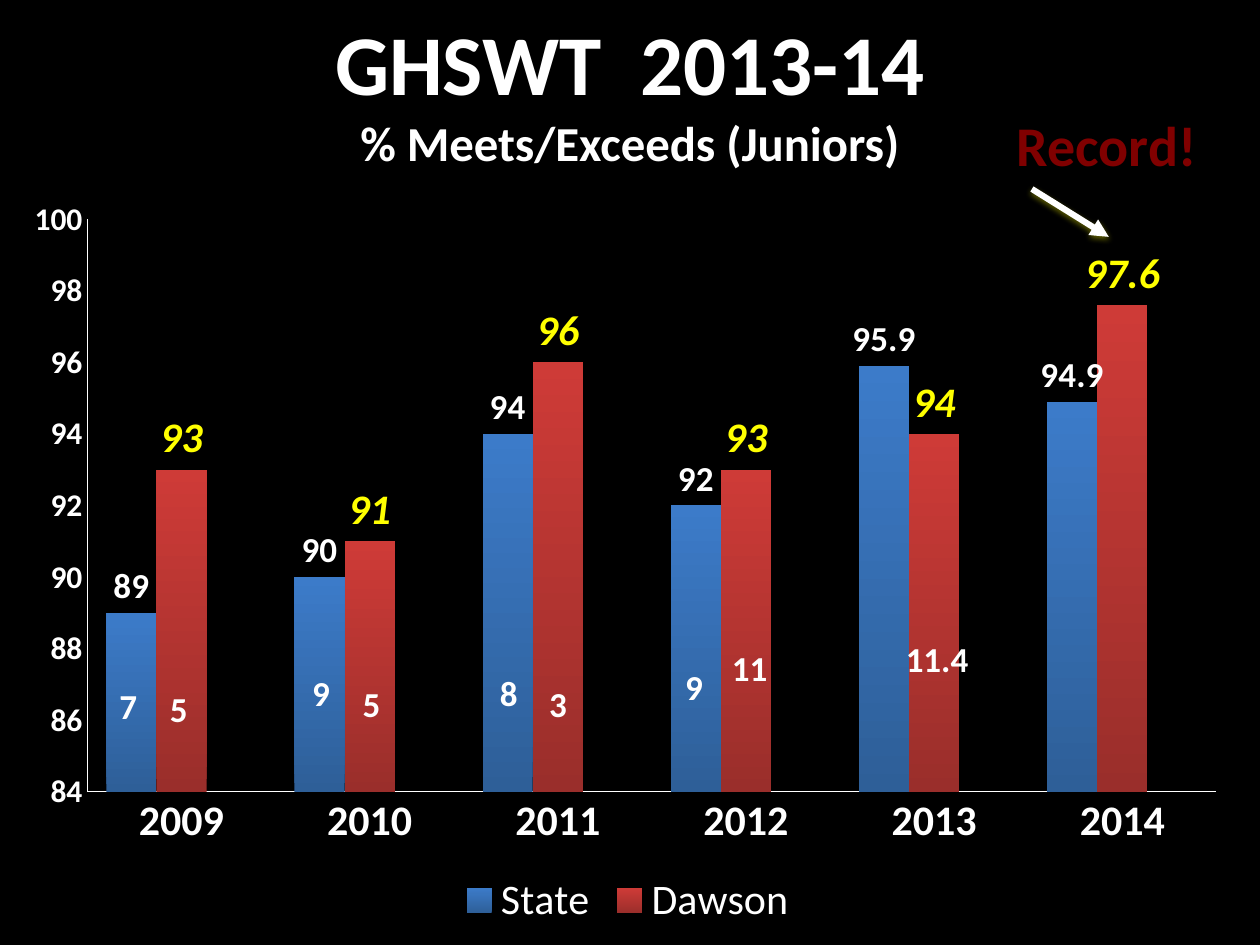
from dataclasses import dataclass

from pptx import Presentation
from pptx import util as u
from pptx.chart.data import CategoryChartData
from pptx.dml.color import RGBColor
from pptx.enum import chart as ch, shapes, text
from pptx.oxml import parse_xml
from pptx.oxml.ns import nsdecls, qn

FONT = "Calibri"
COLORS = {
    "background": "000000",
    "text": "FFFFFF",
    "highlight": "FFFF00",
    "record": "800000",
}


@dataclass
class Series:
    name: str
    values: tuple
    top: str
    bottom: str
    label_size: int
    label_color: str
    label_italic: bool = False


@dataclass
class Count:
    value: str
    left: float
    top: float
    width: float = 0.34


YEARS = ("2009", "2010", "2011", "2012", "2013", "2014")
SERIES = (
    Series("State", (89, 90, 94, 92, 95.9, 94.9), "3C7BC9", "2E5F98", 20, "text"),
    Series("Dawson", (93, 91, 96, 93, 94, 97.6), "CE3B37", "9A2E2B", 24, "highlight", True),
)
COUNTS = (
    Count("7", 0.85, 5.38),
    Count("5", 1.25, 5.41, 0.51),
    Count("9", 2.38, 5.28),
    Count("5", 2.78, 5.37),
    Count("8", 3.87, 5.28),
    Count("3", 4.26, 5.37),
    Count("9", 5.34, 5.23),
    Count("11", 5.71, 5.08, 0.53),
    Count("11.4", 7.09, 5.01, 0.79),
)


def rgb(name: str) -> RGBColor:
    return RGBColor.from_string(COLORS[name])


def set_font(font, size: float, color: str = "text", bold: bool = True) -> None:
    font.name = FONT
    font.size = u.Pt(size)
    font.bold = bold
    font.color.rgb = rgb(color)


def add_text(slide, words: str, box: tuple, size: float, color: str = "text", wrap: bool = True):
    frame = slide.shapes.add_textbox(*map(u.Inches, box)).text_frame
    frame.word_wrap = wrap
    paragraph = frame.paragraphs[0]
    paragraph.text = words
    set_font(paragraph.font, size, color)
    return frame


def add_title(slide) -> None:
    frame = add_text(slide, "GHSWT  2013-14\v% Meets/Exceeds (Juniors)", (0.5, 0, 9, 1.44), 48.6)
    frame.vertical_anchor = text.MSO_ANCHOR.MIDDLE
    heading = frame.paragraphs[0]
    heading.alignment = text.PP_ALIGN.CENTER
    heading.runs[1].font.size = u.Pt(27.9)


def style_series(bars, series: Series) -> None:
    fill = bars.format.fill
    fill.gradient()
    fill.gradient_angle = 90
    for stop, color in zip(fill.gradient_stops, (series.bottom, series.top)):
        stop.color.rgb = RGBColor.from_string(color)
    labels = bars.data_labels
    labels.show_value = True
    labels.position = ch.XL_LABEL_POSITION.OUTSIDE_END
    set_font(labels.font, series.label_size, series.label_color)
    labels.font.italic = series.label_italic


def style_axis(axis, size: float) -> None:
    axis.has_major_gridlines = False
    axis.major_tick_mark = axis.minor_tick_mark = ch.XL_TICK_MARK.NONE
    axis.format.line.color.rgb = rgb("text")
    axis.format.line.width = u.Pt(0.75)
    set_font(axis.tick_labels.font, size)


def set_plot_area(chart, x: float, y: float, w: float, h: float) -> None:
    """Fix the inner plot area, in fractions of the chart."""
    plot_area = chart._chartSpace.chart.plotArea
    for layout in plot_area.findall(qn("c:layout")):
        plot_area.remove(layout)
    plot_area.insert(0, parse_xml(
        f'<c:layout {nsdecls("c")}><c:manualLayout><c:layoutTarget val="inner"/>'
        '<c:xMode val="edge"/><c:yMode val="edge"/>'
        f'<c:x val="{x}"/><c:y val="{y}"/><c:w val="{w}"/><c:h val="{h}"/>'
        '</c:manualLayout></c:layout>'))


def add_scores_chart(slide) -> None:
    data = CategoryChartData()
    data.categories = YEARS
    for series in SERIES:
        data.add_series(series.name, series.values)
    data.add_series("Series 3", [None] * len(YEARS))  # leaves room beside the bars
    chart = slide.shapes.add_chart(
        ch.XL_CHART_TYPE.COLUMN_CLUSTERED,
        *map(u.Inches, (0.11, 1.44, 9.74, 5.98)), data).chart
    set_font(chart.font, 18, bold=False)
    chart.has_title = False

    plot = chart.plots[0]
    plot.gap_width = 75
    plot.overlap = 0
    plot.vary_by_categories = False
    for bars, series in zip(plot.series, SERIES):
        style_series(bars, series)

    style_axis(chart.category_axis, 24)
    scale = chart.value_axis
    style_axis(scale, 18)
    scale.minimum_scale, scale.maximum_scale, scale.major_unit = 84, 100, 2

    chart.has_legend = True
    legend = chart.legend
    legend.position = ch.XL_LEGEND_POSITION.BOTTOM
    legend.include_in_layout = False
    set_font(legend.font, 24, bold=False)
    legend._element.find(qn("c:legendPos")).addnext(parse_xml(
        f'<c:legendEntry {nsdecls("c")}><c:idx val="{len(SERIES)}"/>'
        '<c:delete val="1"/></c:legendEntry>'))
    set_plot_area(chart, 0.06, 0.05, 0.92, 0.76)


def add_record_arrow(slide) -> None:
    arrow = slide.shapes.add_connector(
        shapes.MSO_CONNECTOR.STRAIGHT, *map(u.Inches, (8.19, 1.5, 8.8, 1.88)))
    arrow.line.color.rgb = rgb("text")
    arrow.line.width = u.Pt(3.5)
    arrow.line._get_or_add_ln().append(parse_xml(f'<a:tailEnd {nsdecls("a")} type="triangle"/>'))
    arrow._element.spPr.append(parse_xml(
        f'<a:effectLst {nsdecls("a")}><a:outerShdw blurRad="{u.Pt(3.6)}" dist="{u.Pt(1.6)}" '
        f'dir="5400000" rotWithShape="0"><a:srgbClr val="{COLORS["highlight"]}">'
        '<a:alpha val="38000"/></a:srgbClr></a:outerShdw></a:effectLst>'))


def main() -> None:
    deck = Presentation()
    deck.slide_width, deck.slide_height = u.Inches(10), u.Inches(7.5)
    slide = deck.slides.add_slide(deck.slide_layouts[6])
    slide.background.fill.solid()
    slide.background.fill.fore_color.rgb = rgb("background")

    add_title(slide)
    add_scores_chart(slide)
    for count in COUNTS:
        add_text(slide, count.value, (count.left, count.top, count.width, 0.44), 20)
    add_record_arrow(slide)
    add_text(slide, "Record!", (7.97, 0.83, 1.66, 0.64), 32, "record", wrap=False)
    deck.save("out.pptx")


if __name__ == "__main__":
    main()
